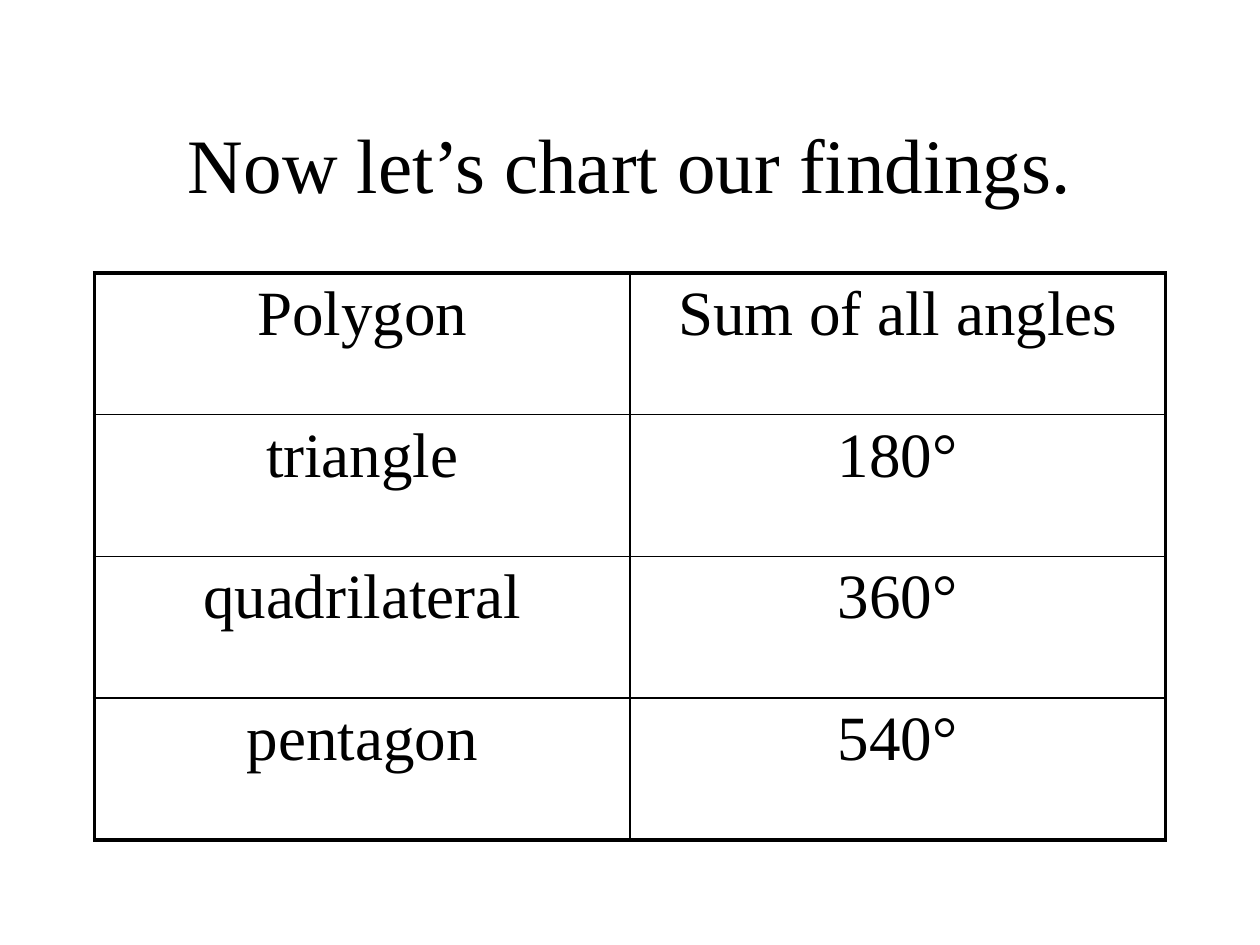
from pptx import Presentation
from pptx.dml.color import RGBColor
from pptx.enum.text import MSO_ANCHOR, PP_ALIGN
from pptx.oxml.ns import qn
from pptx.util import Pt
from lxml.etree import SubElement

TITLE = "Now let’s chart our findings."
ROWS = [
    ("Polygon", "Sum of all angles"),
    ("triangle", "180°"),
    ("quadrilateral", "360°"),
    ("pentagon", "540°"),
]
COLORS = {"ink": "000000"}
FONT = "Times New Roman"
THICK, THIN = 2.25, 1
SCALE = 9525


def px(*sizes):
    return [size * SCALE for size in sizes]


def style(par, size):
    par.alignment = PP_ALIGN.CENTER
    par.font.name = FONT
    par.font.size = Pt(size)
    par.font.color.rgb = RGBColor.from_string(COLORS["ink"])


def border(cell, side, width):
    line = SubElement(cell._tc.get_or_add_tcPr(), qn("a:ln" + side), w=str(Pt(width)))
    fill = SubElement(line, qn("a:solidFill"))
    SubElement(fill, qn("a:srgbClr"), val=COLORS["ink"])


deck = Presentation()
deck.slide_width, deck.slide_height = px(960, 720)
slide = deck.slides.add_slide(deck.slide_layouts[5])

title = slide.shapes.title
title.left, title.top, title.width, title.height = px(72, 64, 816, 120)
title.text_frame.text = TITLE
title.text_frame.vertical_anchor = MSO_ANCHOR.MIDDLE
style(title.text_frame.paragraphs[0], 44)

count, wide = len(ROWS), len(ROWS[0])
table = slide.shapes.add_table(count, wide, *px(72, 208, 816, 432)).table
table.first_row = table.horz_banding = False
for r, row in enumerate(ROWS):
    for c, text in enumerate(row):
        cell = table.cell(r, c)
        cell.text = text
        style(cell.text_frame.paragraphs[0], 36)
        edges = {"L": c == 0, "R": c == wide - 1, "T": r == 0, "B": r == count - 1}
        for side, outer in edges.items():
            border(cell, side, THICK if outer else THIN)
        cell.fill.background()

deck.save("out.pptx")
